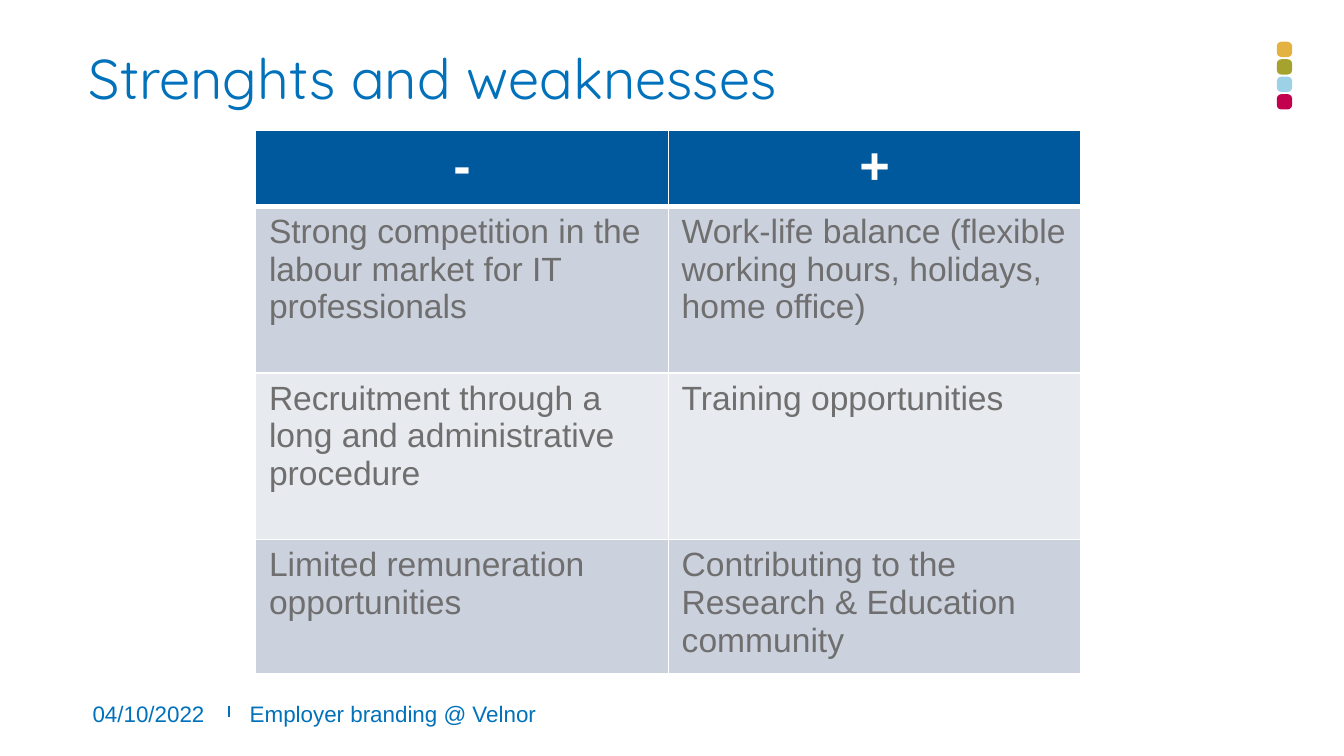
from lxml import etree
from pptx import Presentation
from pptx import util as u
from pptx.dml.color import RGBColor
from pptx.enum import shapes, text
from pptx.oxml import ns

# Content
TITLE = "Strenghts and weaknesses"
DATE = "04/10/2022"
FOOTER = "Employer branding @ Velnor"
ROWS = [
    ("-", "+"),
    ("Strong competition in the labour market for IT professionals",
     "Work-life balance (flexible working hours, holidays, home office)"),
    ("Recruitment through a long and administrative procedure",
     "Training opportunities"),
    ("Limited remuneration opportunities",
     "Contributing to the Research & Education community"),
]
ROW_HEIGHTS = [1.37, 3.15, 3.15, 2.41]
COLUMN_WIDTH = 7.8
DOT_COLORS = ["E3B240", "A5A32E", "9DD1E7", "C3004D"]
BLUE, HEADER_BLUE, GREY, WHITE = "0071BA", "00599C", "706F6F", "FFFFFF"
BANDS = ["CCD1DE", "E7EAEF"]


def color(value):
    return RGBColor.from_string(value)


def write(frame, content, size, fill, font="Arial", bold=False,
          align=text.PP_ALIGN.LEFT, spacing=None):
    paragraph = frame.paragraphs[0]
    paragraph.alignment = align
    paragraph.line_spacing = spacing
    run = paragraph.add_run()
    run.text = content
    run.font.name = font
    run.font.size = u.Pt(size)
    run.font.bold = bold
    run.font.color.rgb = color(fill)


def add_text(left, top, width, height, content, size, fill,
             anchor=text.MSO_ANCHOR.MIDDLE, **options):
    box = slide.shapes.add_textbox(u.Cm(left), u.Cm(top), u.Cm(width), u.Cm(height))
    frame = box.text_frame
    frame.word_wrap = True
    frame.vertical_anchor = anchor
    frame.margin_left = frame.margin_right = frame.margin_top = frame.margin_bottom = 0
    write(frame, content, size, fill, **options)


def add_border(cell, side, points):
    properties = cell._tc.get_or_add_tcPr()
    line = etree.SubElement(properties, ns.qn("a:ln" + side), w=str(u.Pt(points)))
    solid = etree.SubElement(line, ns.qn("a:solidFill"))
    etree.SubElement(solid, ns.qn("a:srgbClr"), val=WHITE)


presentation = Presentation()
presentation.slide_width = u.Cm(25.4)
presentation.slide_height = u.Cm(14.29)
slide = presentation.slides.add_slide(presentation.slide_layouts[6])

# Footer divider
divider = slide.shapes.add_connector(
    shapes.MSO_CONNECTOR.STRAIGHT, u.Cm(4.32), u.Cm(13.34), u.Cm(4.32), u.Cm(13.56))
divider.line.color.rgb = color(BLUE)
divider.line.width = u.Pt(1)
etree.SubElement(divider._element.spPr, ns.qn("a:effectLst"))

# Column of coloured dots
for index, dot_color in enumerate(DOT_COLORS):
    dot = slide.shapes.add_shape(
        shapes.MSO_SHAPE.ROUNDED_RECTANGLE,
        u.Cm(24.13), u.Cm(0.79 + 0.33 * index), u.Cm(0.29), u.Cm(0.29))
    dot.adjustments[0] = 0.3
    dot.rotation = 90
    dot.shadow.inherit = False
    dot.fill.solid()
    dot.fill.fore_color.rgb = color(dot_color)
    dot.line.fill.background()

# Title and footer
add_text(1.68, 0.97, 21.89, 1.96, TITLE, 30, BLUE, font="Quicksand",
         anchor=text.MSO_ANCHOR.TOP, spacing=0.9)
add_text(1.75, 13.23, 2.39, 0.53, DATE, 12, BLUE)
add_text(4.72, 13.23, 8.59, 0.53, FOOTER, 12, BLUE)

# Table of weaknesses and strengths
table = slide.shapes.add_table(
    len(ROWS), 2, u.Cm(4.83), u.Cm(2.46),
    u.Cm(2 * COLUMN_WIDTH), u.Cm(sum(ROW_HEIGHTS))).table
for column in table.columns:
    column.width = u.Cm(COLUMN_WIDTH)
for row_index, (entries, height) in enumerate(zip(ROWS, ROW_HEIGHTS)):
    table.rows[row_index].height = u.Cm(height)
    is_header = row_index == 0
    for column_index, entry in enumerate(entries):
        cell = table.cell(row_index, column_index)
        for side in "LRTB":
            thick = (side == "B" and is_header) or (side == "T" and row_index == 1)
            add_border(cell, side, 3 if thick else 1)
        cell.fill.solid()
        cell.fill.fore_color.rgb = color(
            HEADER_BLUE if is_header else BANDS[(row_index - 1) % 2])
        if is_header:
            write(cell.text_frame, entry, 28, WHITE, bold=True,
                  align=text.PP_ALIGN.CENTER)
        else:
            write(cell.text_frame, entry, 18, GREY)

presentation.save("out.pptx")
